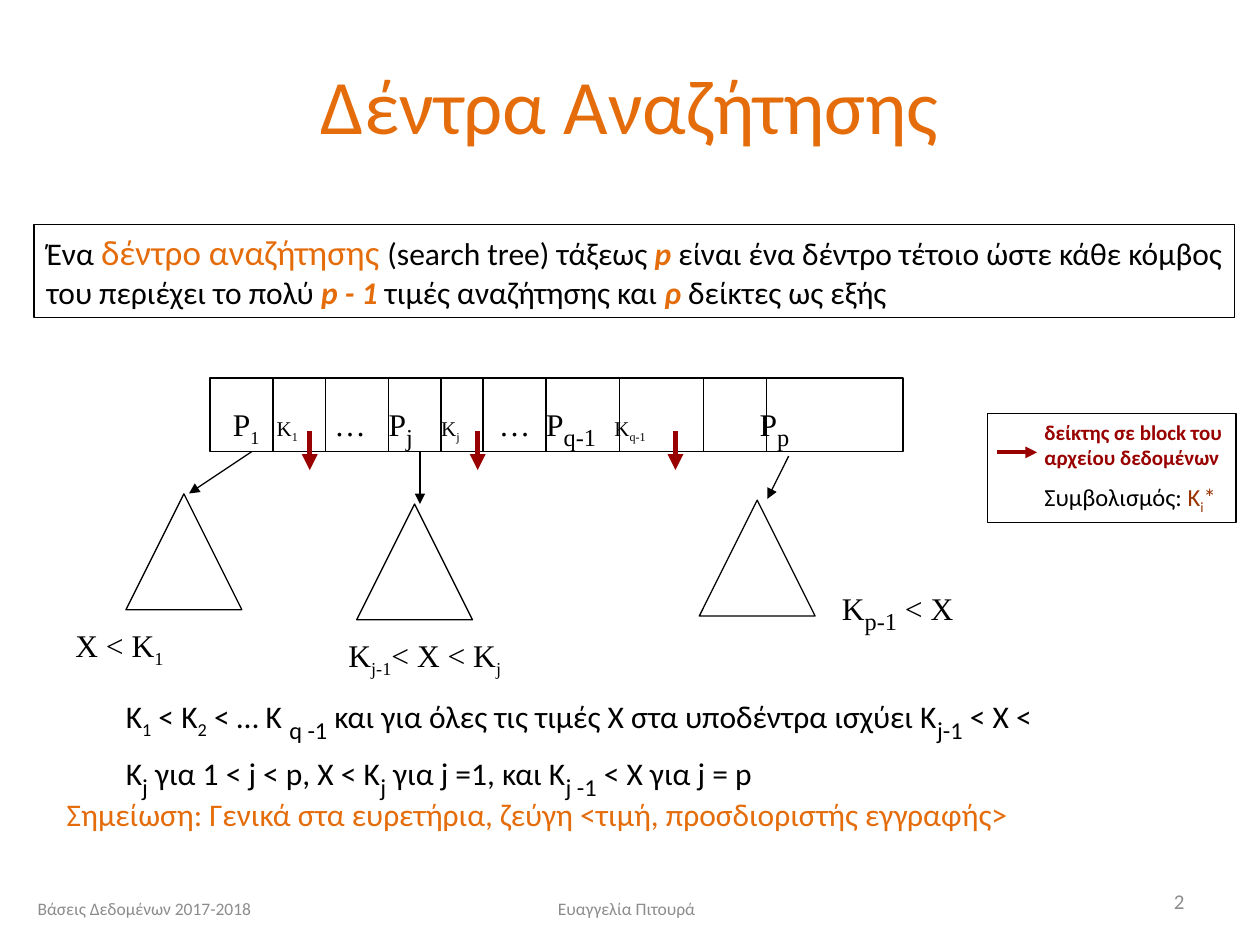
from typing import NamedTuple, Optional

from lxml import etree
from pptx import Presentation
from pptx.dml.color import RGBColor
from pptx.enum.shapes import MSO_CONNECTOR, MSO_SHAPE
from pptx.enum.text import MSO_ANCHOR, PP_ALIGN
from pptx.oxml.ns import qn
from pptx.util import Pt

RECT, TRIANGLE = MSO_SHAPE.RECTANGLE, MSO_SHAPE.ISOSCELES_TRIANGLE
STRAIGHT = MSO_CONNECTOR.STRAIGHT
LEFT, CENTER, RIGHT, JUSTIFY = (
    PP_ALIGN.LEFT, PP_ALIGN.CENTER, PP_ALIGN.RIGHT, PP_ALIGN.JUSTIFY)
TOP, MIDDLE = MSO_ANCHOR.TOP, MSO_ANCHOR.MIDDLE
SANS, SERIF = "Calibri", "Times New Roman"
COLORS = {"black": "000000", "white": "FFFFFF", "orange": "E46C0A",
          "gray": "8C8C8C", "red": "990000", "brown": "993300"}


class Run(NamedTuple):
    text: str
    size: Optional[float] = None
    color: Optional[str] = None
    bold: bool = False
    italic: bool = False
    sub: bool = False


class Box(NamedTuple):
    left: float
    top: float
    width: float
    height: float


class Line(NamedTuple):
    x1: float
    y1: float
    x2: float
    y2: float


def rgb(name: str) -> RGBColor:
    return RGBColor.from_string(COLORS[name])


def sub(text: str, size: float = 24) -> Run:
    return Run(text, size, sub=True)


def term(text: str) -> Run:
    return Run(text, color="orange", bold=True, italic=True)


def add_outline(shapes, kind, box: Box, fill: Optional[str] = None):
    s = shapes.add_shape(kind, *map(Pt, box))
    s.shadow.inherit = False
    if fill:
        s.fill.solid()
        s.fill.fore_color.rgb = rgb(fill)
    else:
        s.fill.background()
    s.line.color.rgb = rgb("black")
    s.line.width = Pt(0.75)
    return s


def add_line(shapes, line: Line, color: str = "black", width: float = 0.75,
             arrow: bool = False) -> None:
    c = shapes.add_connector(STRAIGHT, *map(Pt, line))
    c.line.color.rgb = rgb(color)
    c.line.width = Pt(width)
    if arrow:
        etree.SubElement(c.line._get_or_add_ln(), qn("a:tailEnd"), type="triangle")
    etree.SubElement(c._element.spPr, qn("a:effectLst"))


def write(s, *paragraphs, size: float = 18, color: str = "black", font: str = SANS,
          align=LEFT, anchor=TOP, gap: float = 0, tabs=()) -> None:
    """Fill a shape; a paragraph is a string or a list of strings and Runs."""
    tf = s.text_frame
    tf.word_wrap = True
    tf.vertical_anchor = anchor
    for i, content in enumerate(paragraphs):
        p = tf.add_paragraph() if i else tf.paragraphs[0]
        p.alignment = align
        if i:
            p.space_before = Pt(gap)
        if tabs:
            tab_list = etree.SubElement(p._p.get_or_add_pPr(), qn("a:tabLst"))
            for pos in tabs:
                etree.SubElement(tab_list, qn("a:tab"), pos=str(Pt(pos)), algn="l")
        for part in [content] if isinstance(content, str) else content:
            run = Run(part) if isinstance(part, str) else part
            r = p.add_run()
            r.text = run.text
            r.font.name = font
            r.font.size = Pt(run.size or size)
            r.font.color.rgb = rgb(run.color or color)
            r.font.bold = run.bold
            r.font.italic = run.italic
            if run.sub:
                r._r.get_or_add_rPr().set("baseline", "-25000")


def add_text(shapes, box: Box, *paragraphs, **fmt) -> None:
    write(shapes.add_textbox(*map(Pt, box)), *paragraphs, **fmt)


def add_definitions(shapes) -> None:
    add_text(shapes, Box(36, 14.4, 648, 90), "Δέντρα Αναζήτησης",
             size=44, color="orange", align=CENTER, anchor=MIDDLE)
    write(add_outline(shapes, RECT, Box(19.5, 128.2, 686, 53.3)),
          ["Ένα ", Run("δέντρο αναζήτησης ", 20, "orange"), "(search tree) τάξεως ",
           term("p "), "είναι ένα δέντρο τέτοιο ώστε κάθε κόμβος του περιέχει το πολύ ",
           term("p - 1 "), "τιμές αναζήτησης και ", term("ρ"), " δείκτες ως εξής"],
          align=JUSTIFY)
    add_text(shapes, Box(64.8, 388.8, 540, 50.4),
             ["Κ", sub("1", 18), " < Κ", sub("2", 18), " < … Κ ", sub("q -1"),
              " και για όλες τις τιμές X στα υποδέντρα ισχύει Κ", sub("j-1"),
              " < X < K", sub("j"), " για 1 < j < p, X < K", sub("j"),
              " για j =1, και Κ", sub("j -1"), " < Χ για j = p"])
    add_text(shapes, Box(31, 450.7, 652, 29),
             "Σημείωση: Γενικά στα ευρετήρια, ζεύγη <τιμή, προσδιοριστής εγγραφής>",
             color="orange")


def add_tree(shapes) -> None:
    for left, top in ((72, 282.2), (399.6, 285.8), (203.8, 288)):
        add_outline(shapes, TRIANGLE, Box(left, top, 66.2, 66.2), "white")

    node = Box(120, 216, 396, 42)
    bottom = node.top + node.height
    key = Run("K", 12)
    add_text(shapes, Box(126, 221.8, 498, 36),
             ["P", sub("1", 18), "\t", key, sub("1", 12), "\t…\tP", sub("j"),
              "\t", key, sub("j", 12), "\t…\tP", sub("q-1"),
              "\t", key, sub("q-1", 12), "\tP", sub("p")],
             font=SERIF, tabs=(25, 58, 89, 119, 152, 179, 218, 301))
    add_outline(shapes, RECT, node)
    for x in (156, 186, 222, 252, 276, 312, 354, 402, 438):
        add_line(shapes, Line(x, node.top, x, bottom))

    for pointer in (Line(144, bottom, 108, 282), Line(240, bottom, 240, 288),
                    Line(450.7, 260.6, 438.5, 285.1)):
        add_line(shapes, pointer, arrow=True)
    for x in (177, 273, 386):
        add_line(shapes, Line(x, 246.2, x, 268.6), "red", 3, arrow=True)

    for box, condition in (
            (Box(36, 354, 120, 31), ["X < K", sub("1", 18)]),
            (Box(192, 360, 120, 31), ["K", sub("j-1", 18), "< X < K", sub("j", 18)]),
            (Box(474, 326.9, 124, 29), ["K", sub("p-1"), " < X"])):
        add_text(shapes, box, condition, font=SERIF)


def add_legend(shapes) -> None:
    add_line(shapes, Line(569.5, 258.5, 592.6, 258.5), "red", 2.25, arrow=True)
    add_text(shapes, Box(589.7, 236.2, 130.3, 87),
             [Run("δείκτης σε block του αρχείου δεδομένων", 12, "red", bold=True)],
             ["Συμβολισμός: ", Run("K", color="brown"),
              Run("i", color="brown", sub=True), Run("*", color="brown")],
             size=14, gap=7)
    add_outline(shapes, RECT, Box(564.5, 236.2, 141.8, 62.6))


def add_footer(shapes) -> None:
    for box, text, size, align in (
            (Box(14.4, 504.7, 168, 29), "Βάσεις Δεδομένων 2017-2018", 10, LEFT),
            (Box(244, 504.7, 228, 29), "Ευαγγελία Πιτουρά", 10, CENTER),
            (Box(516, 500.4, 168, 29), "2", 12, RIGHT)):
        add_text(shapes, box, text, size=size, color="gray", align=align, anchor=MIDDLE)


def main() -> None:
    prs = Presentation()
    prs.slide_width, prs.slide_height = Pt(720), Pt(540)
    shapes = prs.slides.add_slide(prs.slide_layouts[6]).shapes
    add_definitions(shapes)
    add_tree(shapes)
    add_legend(shapes)
    add_footer(shapes)
    prs.save("out.pptx")


if __name__ == "__main__":
    main()
